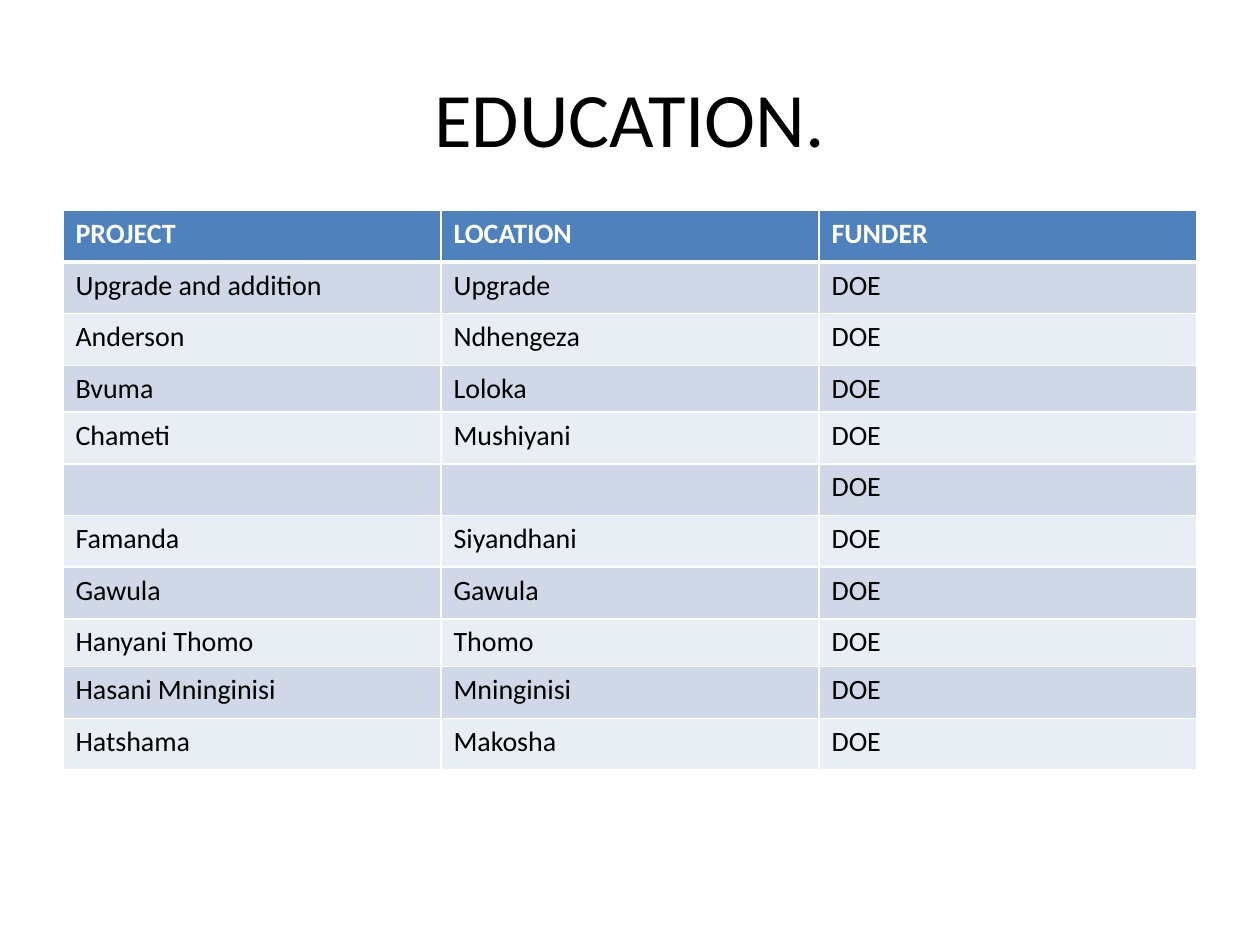
from lxml import etree
from pptx import Presentation
from pptx.dml.color import RGBColor
from pptx.enum.text import MSO_ANCHOR, PP_ALIGN
from pptx.oxml.ns import qn
from pptx.util import Inches, Pt

MIDDLE = MSO_ANCHOR.MIDDLE
LEFT, CENTER = PP_ALIGN.LEFT, PP_ALIGN.CENTER
TITLE_ONLY_LAYOUT = 5

COLORS = {
    "header": "4F81BD",
    "odd": "D0D8E8",
    "even": "E9EDF4",
    "white": "FFFFFF",
    "black": "000000",
}
PROJECTS = [
    ("PROJECT", "LOCATION", "FUNDER"),
    ("Upgrade and addition", "Upgrade", "DOE"),
    ("Anderson", "Ndhengeza", "DOE"),
    ("Bvuma", "Loloka", "DOE"),
    ("Chameti", "Mushiyani", "DOE"),
    ("", "", "DOE"),
    ("Famanda", "Siyandhani", "DOE"),
    ("Gawula", "Gawula", "DOE"),
    ("Hanyani Thomo", "Thomo", "DOE"),
    ("Hasani Mninginisi", "Mninginisi", "DOE"),
    ("Hatshama", "Makosha", "DOE"),
]
ROW_HEIGHT = 0.41
SHORT_ROWS = {3: 0.28, 8: 0.38}
COLUMN_WIDTH = 3
MARGIN = 0.5


def write_text(text_frame, text, size=16, color="black", bold=False, align=LEFT):
    paragraph = text_frame.paragraphs[0]
    paragraph.alignment = align
    run = paragraph.add_run()
    run.text = text
    run.font.name = "Calibri"
    run.font.size = Pt(size)
    run.font.bold = bold
    run.font.color.rgb = RGBColor.from_string(COLORS[color])


def format_cell(cell, fill, bottom_width=1):
    """Fill a cell and give it white borders, with a chosen bottom width in points."""
    properties = cell._tc.get_or_add_tcPr()
    for side, width in (("lnL", 1), ("lnR", 1), ("lnT", 1), ("lnB", bottom_width)):
        line = etree.SubElement(properties, qn(f"a:{side}"), w=str(Pt(width)))
        solid = etree.SubElement(line, qn("a:solidFill"))
        etree.SubElement(solid, qn("a:srgbClr"), val=COLORS["white"])
    cell.fill.solid()
    cell.fill.fore_color.rgb = RGBColor.from_string(COLORS[fill])


presentation = Presentation()
presentation.slide_width = Inches(10)
presentation.slide_height = Inches(7.5)
slide = presentation.slides.add_slide(presentation.slide_layouts[TITLE_ONLY_LAYOUT])

title = slide.shapes.title
title.left, title.top = Inches(MARGIN), Inches(0.3)
title.width, title.height = Inches(9), Inches(1.25)
title.text_frame.vertical_anchor = MIDDLE
write_text(title.text_frame, "EDUCATION.", size=44, align=CENTER)

row_count, column_count = len(PROJECTS), len(PROJECTS[0])
table = slide.shapes.add_table(
    row_count, column_count, Inches(MARGIN), Inches(1.67),
    Inches(COLUMN_WIDTH * column_count), Inches(ROW_HEIGHT * row_count),
).table
for column in table.columns:
    column.width = Inches(COLUMN_WIDTH)

for row_index, values in enumerate(PROJECTS):
    table.rows[row_index].height = Inches(SHORT_ROWS.get(row_index, ROW_HEIGHT))
    is_header = row_index == 0
    fill = "header" if is_header else "odd" if row_index % 2 else "even"
    for column_index, value in enumerate(values):
        cell = table.cell(row_index, column_index)
        format_cell(cell, fill, bottom_width=3 if is_header else 1)
        if value:
            write_text(cell.text_frame, value, bold=is_header,
                       color="white" if is_header else "black")

presentation.save("out.pptx")
